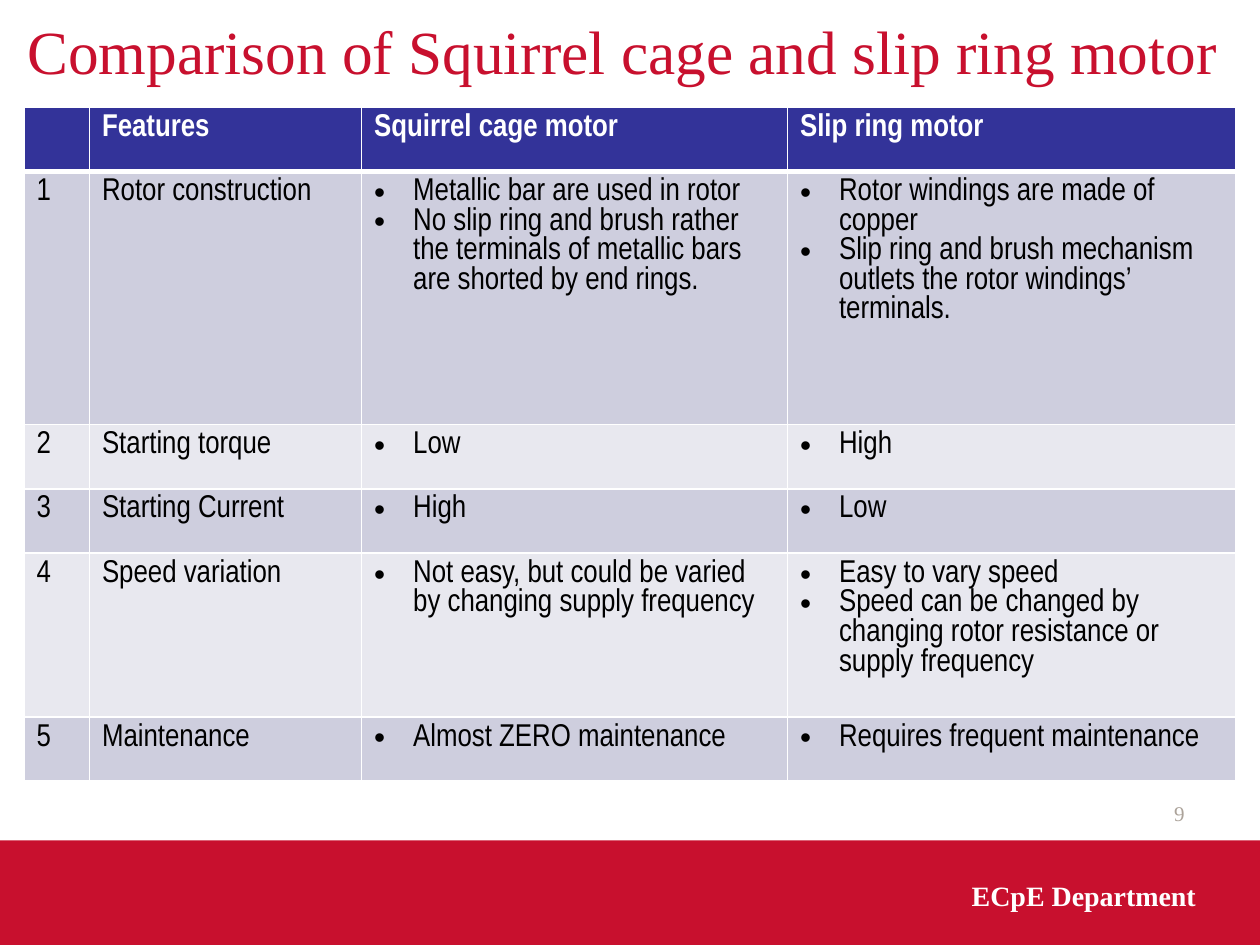
from typing import NamedTuple

from lxml.etree import SubElement
from pptx import Presentation
from pptx.dml.color import RGBColor
from pptx.enum.shapes import MSO_SHAPE as Shape
from pptx.enum.text import MSO_ANCHOR as Anchor, PP_ALIGN as Align
from pptx.oxml import parse_xml
from pptx.oxml.ns import nsdecls, qn
from pptx.util import Inches, Pt

RED = RGBColor(0xC8, 0x10, 0x2E)
BLUE = RGBColor(0x33, 0x33, 0x99)
LILAC = RGBColor(0xCE, 0xCE, 0xDE)
PALE = RGBColor(0xE8, 0xE8, 0xEF)
GRAY = RGBColor(0xAC, 0xA3, 0x9A)
WHITE = RGBColor(0xFF, 0xFF, 0xFF)
BLACK = RGBColor(0, 0, 0)
SERIF, NARROW = "Times New Roman", "Arial Narrow"


class Label(NamedTuple):
    text: str
    box: tuple[float, float, float, float]
    size: int
    color: RGBColor
    align: Align = Align.LEFT
    anchor: Anchor = Anchor.MIDDLE
    bold: bool = False


class Row(NamedTuple):
    feature: str
    cage: list[str]
    ring: list[str]
    height: float = 0.51


LABELS = [
    Label("Comparison of Squirrel cage and slip ring motor",
          (0.12, 0, 9.75, 0.79), 35, RED),
    Label("9", (7.17, 6.25, 2.33, 0.4), 12, GRAY, Align.RIGHT),
    Label("ECpE Department", (6.92, 6.92, 2.67, 0.42), 16, WHITE,
          Align.RIGHT, Anchor.TOP, True),
]
HEADS = ["", "Features", "Squirrel cage motor", "Slip ring motor"]
WIDTHS = [0.52, 2.16, 3.38, 3.56]
HEAD_H = 0.51
ROWS = [
    Row("Rotor construction",
        ["Metallic bar are used in rotor",
         "No slip ring and brush rather the terminals of metallic bars "
         "are shorted by end rings."],
        ["Rotor windings are made of copper",
         "Slip ring and brush mechanism outlets the rotor windings’ "
         "terminals."], 2.01),
    Row("Starting torque", ["Low"], ["High"]),
    Row("Starting Current", ["High"], ["Low"]),
    Row("Speed variation",
        ["Not easy, but could be varied by changing supply frequency"],
        ["Easy to vary speed",
         "Speed can be changed by changing rotor resistance or supply "
         "frequency"], 1.04),
    Row("Maintenance", ["Almost ZERO maintenance"],
        ["Requires frequent maintenance"]),
]


def write(frame, lines: list[str], *, size: int, font: str, color: RGBColor,
          bold: bool = False, align: Align = Align.LEFT,
          bullet: bool = False) -> None:
    for i, line in enumerate(lines):
        para = frame.add_paragraph() if i else frame.paragraphs[0]
        para.alignment = align
        if bullet:
            props = para._p.get_or_add_pPr()
            props.set("marL", str(Inches(0.31)))
            props.set("indent", str(-Inches(0.31)))
            SubElement(props, qn("a:buFont"), typeface="Arial")
            SubElement(props, qn("a:buChar"), char="•")
        run = para.add_run()
        run.text = line
        run.font.size, run.font.name, run.font.bold = Pt(size), font, bold
        run.font.color.rgb = color


def add_label(slide, label: Label) -> None:
    box = slide.shapes.add_textbox(*map(Inches, label.box))
    frame = box.text_frame
    frame.word_wrap = True
    frame.vertical_anchor = label.anchor
    write(frame, [label.text], size=label.size, font=SERIF,
          color=label.color, bold=label.bold, align=label.align)


def add_rules(cell, top: int = 1, bottom: int = 1) -> None:
    """Draw white borders; top and bottom are widths in points."""
    props = cell._tc.get_or_add_tcPr()
    sides = {"L": 1, "R": 1, "T": top, "B": bottom}
    for i, (side, width) in enumerate(sides.items()):
        props.insert(i, parse_xml(
            f'<a:ln{side} {nsdecls("a")} w="{Pt(width)}"><a:solidFill>'
            f'<a:srgbClr val="{WHITE}"/></a:solidFill></a:ln{side}>'))


def add_grid(slide) -> None:
    heights = [HEAD_H] + [row.height for row in ROWS]
    grid = slide.shapes.add_table(
        len(heights), len(WIDTHS), Inches(0.19), Inches(0.85),
        Inches(sum(WIDTHS)), Inches(sum(heights))).table
    for col, width in zip(grid.columns, WIDTHS):
        col.width = Inches(width)
    for line, height in zip(grid.rows, heights):
        line.height = Inches(height)

    texts = [[[head] if head else [] for head in HEADS]]
    texts += [[[str(n)], [row.feature], row.cage, row.ring]
              for n, row in enumerate(ROWS, 1)]
    for r, line in enumerate(texts):
        head = r == 0
        fill = BLUE if head else LILAC if r % 2 else PALE
        for c, lines in enumerate(line):
            cell = grid.cell(r, c)
            cell.fill.solid()
            cell.fill.fore_color.rgb = fill
            add_rules(cell, top=3 if r == 1 else 1, bottom=3 if head else 1)
            write(cell.text_frame, lines, size=18, font=NARROW, bold=head,
                  color=WHITE if head else BLACK, bullet=not head and c > 1)


def main() -> None:
    deck = Presentation()
    deck.slide_width, deck.slide_height = Inches(10), Inches(7.5)
    slide = deck.slides.add_slide(deck.slide_layouts[6])
    band = slide.shapes.add_shape(
        Shape.RECTANGLE, 0, Inches(6.67), Inches(10), Inches(0.83))
    band.shadow.inherit = False
    band.fill.solid()
    band.fill.fore_color.rgb = RED
    band.line.fill.background()
    for label in LABELS:
        add_label(slide, label)
    add_grid(slide)
    deck.save("out.pptx")


if __name__ == "__main__":
    main()
